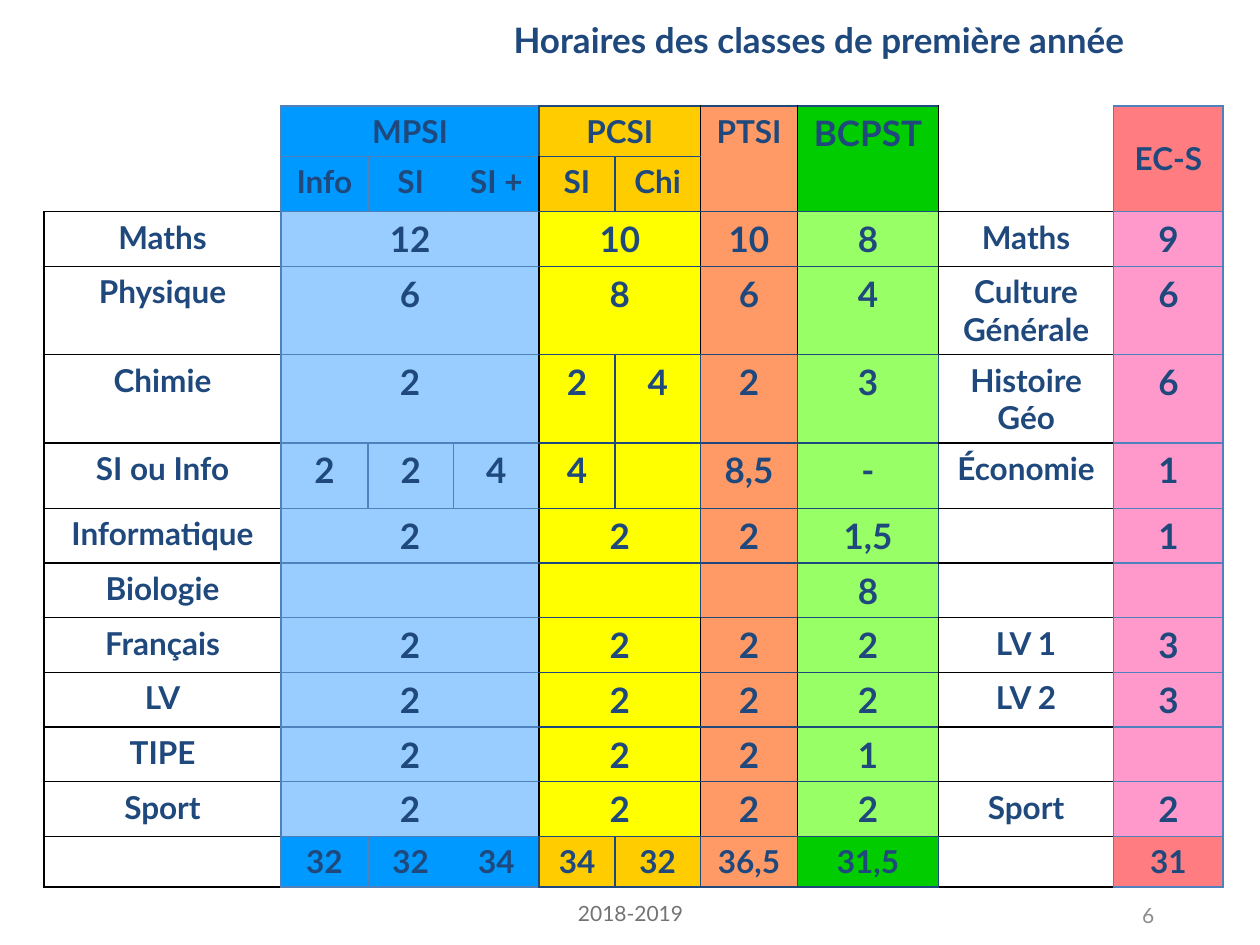
import pptx
import pptx.util
import pptx.dml.color
import pptx.enum.text
import pptx.oxml.ns
from lxml import etree

Inches = pptx.util.Inches
Pt = pptx.util.Pt
RGBColor = pptx.dml.color.RGBColor
Align = pptx.enum.text.PP_ALIGN
Anchor = pptx.enum.text.MSO_ANCHOR

FONT = "Lato"
NAVY = RGBColor(0x1F, 0x49, 0x7D)
BLUE = RGBColor(0x4F, 0x81, 0xBD)
BLACK = RGBColor(0x00, 0x00, 0x00)
DATE_GREY = RGBColor(0x74, 0x72, 0x72)
NUMBER_GREY = RGBColor(0x8C, 0x8C, 0x8C)

MPSI = (RGBColor(0x00, 0x99, 0xFF), RGBColor(0x99, 0xCC, 0xFF))
PCSI = (RGBColor(0xFF, 0xCC, 0x00), RGBColor(0xFF, 0xFF, 0x00))
PTSI = (RGBColor(0xFF, 0x99, 0x66), RGBColor(0xFF, 0x99, 0x66))
BCPST = (RGBColor(0x00, 0xCC, 0x00), RGBColor(0x99, 0xFF, 0x66))
ECS = (RGBColor(0xFF, 0x7C, 0x80), RGBColor(0xFF, 0x99, 0xCC))

# One (heading and total, hours) pair of fills per column; None for subject labels.
COLUMN_FILLS = [None, MPSI, MPSI, MPSI, PCSI, PCSI, PTSI, BCPST, None, ECS]
COLUMN_WIDTHS = [1.88, 0.69, 0.68, 0.68, 0.6, 0.68, 0.77, 1.12, 1.39, 0.87]
ROW_HEIGHTS = [0.4, 0.44, 0.43, 0.7, 0.7, 0.52] + [0.43] * 6 + [0.4]

LEFT, UP = "<", "^"  # cell absorbed by its left or upper neighbour
HOURS = [
    ["", "MPSI", LEFT, LEFT, "PCSI", LEFT, "PTSI", "BCPST", "", "EC-S"],
    ["", "Info", "SI", "SI +", "SI", "Chi", UP, UP, "", UP],
    ["Maths", "12", LEFT, LEFT, "10", LEFT, "10", "8", "Maths", "9"],
    ["Physique", "6", LEFT, LEFT, "8", LEFT, "6", "4", "Culture Générale", "6"],
    ["Chimie", "2", LEFT, LEFT, "2", "4", "2", "3", "Histoire Géo", "6"],
    ["SI ou Info", "2", "2", "4", "4", "", "8,5", "-", "Économie", "1"],
    ["Informatique", "2", LEFT, LEFT, "2", LEFT, "2", "1,5", "", "1"],
    ["Biologie", "", LEFT, LEFT, "", LEFT, "", "8", "", ""],
    ["Français", "2", LEFT, LEFT, "2", LEFT, "2", "2", "LV 1", "3"],
    ["LV", "2", LEFT, LEFT, "2", LEFT, "2", "2", "LV 2", "3"],
    ["TIPE", "2", LEFT, LEFT, "2", LEFT, "2", "1", "", ""],
    ["Sport", "2", LEFT, LEFT, "2", LEFT, "2", "2", "Sport", "2"],
    ["", "32", "32", "34", "34", "32", "36,5", "31,5", "", "31"],
]
TOTAL_ROW = len(HOURS) - 1
HEADING_ROWS = (0, 1)
BLACK_DIVIDER_ROWS = (0, 1, 2, 3, 8, 9, 10, 11)


def format_text(paragraph, alignment=Align.CENTER, **formats):
    paragraph.alignment = alignment
    color = formats.pop("color")
    for name, value in {"name": FONT, **formats}.items():
        setattr(paragraph.font, name, value)
    paragraph.font.color.rgb = color


def add_line_of_text(slide, box, text, **formats):
    frame = slide.shapes.add_textbox(*map(Inches, box)).text_frame
    frame.word_wrap = True
    frame.vertical_anchor = Anchor.MIDDLE
    frame.text = text
    format_text(frame.paragraphs[0], **formats)


def vertical_edge(row, boundary):
    """Colour of the line left of column number `boundary`."""
    if boundary == 0:
        return None if row in HEADING_ROWS else BLACK
    if boundary in (1, 2, 3, 9, 10):
        return BLUE
    if boundary == 4:
        return NAVY if row in (0, TOTAL_ROW) else BLACK
    if boundary == 5:
        return NAVY
    return BLACK if row in BLACK_DIVIDER_ROWS else NAVY


def horizontal_edge(boundary, column):
    """Colour of the line above row number `boundary`."""
    if COLUMN_FILLS[column] is None:
        return None if boundary in HEADING_ROWS else BLACK
    return NAVY if 4 <= column <= 7 else BLUE


def draw_edges(cell, **edges):
    properties = cell._tc.get_or_add_tcPr()
    for side, color in edges.items():
        line = etree.SubElement(properties, pptx.oxml.ns.qn(f"a:ln{side}"), w=str(Pt(1)))
        if color is None:
            etree.SubElement(line, pptx.oxml.ns.qn("a:noFill"))
        else:
            fill = etree.SubElement(line, pptx.oxml.ns.qn("a:solidFill"))
            etree.SubElement(fill, pptx.oxml.ns.qn("a:srgbClr"), val=str(color))


def span_of(row, column):
    """Number of rows and columns the cell covers."""
    height = width = 1
    while column + width < len(HOURS[row]) and HOURS[row][column + width] == LEFT:
        width += 1
    while row + height < len(HOURS) and HOURS[row + height][column] == UP:
        height += 1
    return height, width


def fill_cell(cell, row, column):
    text = HOURS[row][column]
    height, width = span_of(row, column)
    draw_edges(
        cell,
        L=None if text == LEFT else vertical_edge(row, column),
        R=vertical_edge(row, column + width),
        T=None if text == UP else horizontal_edge(row, column),
        B=horizontal_edge(row + height, column),
    )
    fills = COLUMN_FILLS[column]
    is_hours = fills is not None and row not in (*HEADING_ROWS, TOTAL_ROW)
    if fills is None:
        cell.fill.background()
    else:
        cell.fill.solid()
        cell.fill.fore_color.rgb = fills[is_hours]
    if text in (LEFT, UP):
        return
    cell.text = text
    cell.vertical_anchor = Anchor.MIDDLE if text == "EC-S" else Anchor.TOP
    size = 20 if is_hours or text == "BCPST" else 18
    format_text(cell.text_frame.paragraphs[0], size=Pt(size), bold=True, color=NAVY)


def add_hours_table(slide, box):
    table = slide.shapes.add_table(len(HOURS), len(COLUMN_WIDTHS), *map(Inches, box)).table
    table.first_row = table.horz_banding = False
    for column, width in zip(table.columns, COLUMN_WIDTHS):
        column.width = Inches(width)
    for row, height in zip(table.rows, ROW_HEIGHTS):
        row.height = Inches(height)
    for row, texts in enumerate(HOURS):
        for column, text in enumerate(texts):
            cell = table.cell(row, column)
            fill_cell(cell, row, column)
            height, width = span_of(row, column)
            if text not in (LEFT, UP) and height * width > 1:
                cell.merge(table.cell(row + height - 1, column + width - 1))


def add_footer(slide, date_box, number_box):
    add_line_of_text(slide, date_box, "2018-2019", size=Pt(12), color=DATE_GREY)
    add_line_of_text(slide, number_box, "6", alignment=Align.RIGHT,
                     size=Pt(12), color=NUMBER_GREY)


def main():
    presentation = pptx.Presentation()
    presentation.slide_width = Inches(10)
    presentation.slide_height = Inches(7.5)
    slide = presentation.slides.add_slide(presentation.slide_layouts[6])
    add_line_of_text(slide, (2.25, -0.19, 8.5, 1), "Horaires des classes de première année",
                     size=Pt(20), bold=True, color=NAVY)
    add_hours_table(slide, (0.35, 0.84, sum(COLUMN_WIDTHS), sum(ROW_HEIGHTS)))
    add_footer(slide, (3.42, 7.14, 3.17, 0.21), (7.17, 7.14, 2.09, 0.24))
    presentation.save("out.pptx")


if __name__ == "__main__":
    main()
